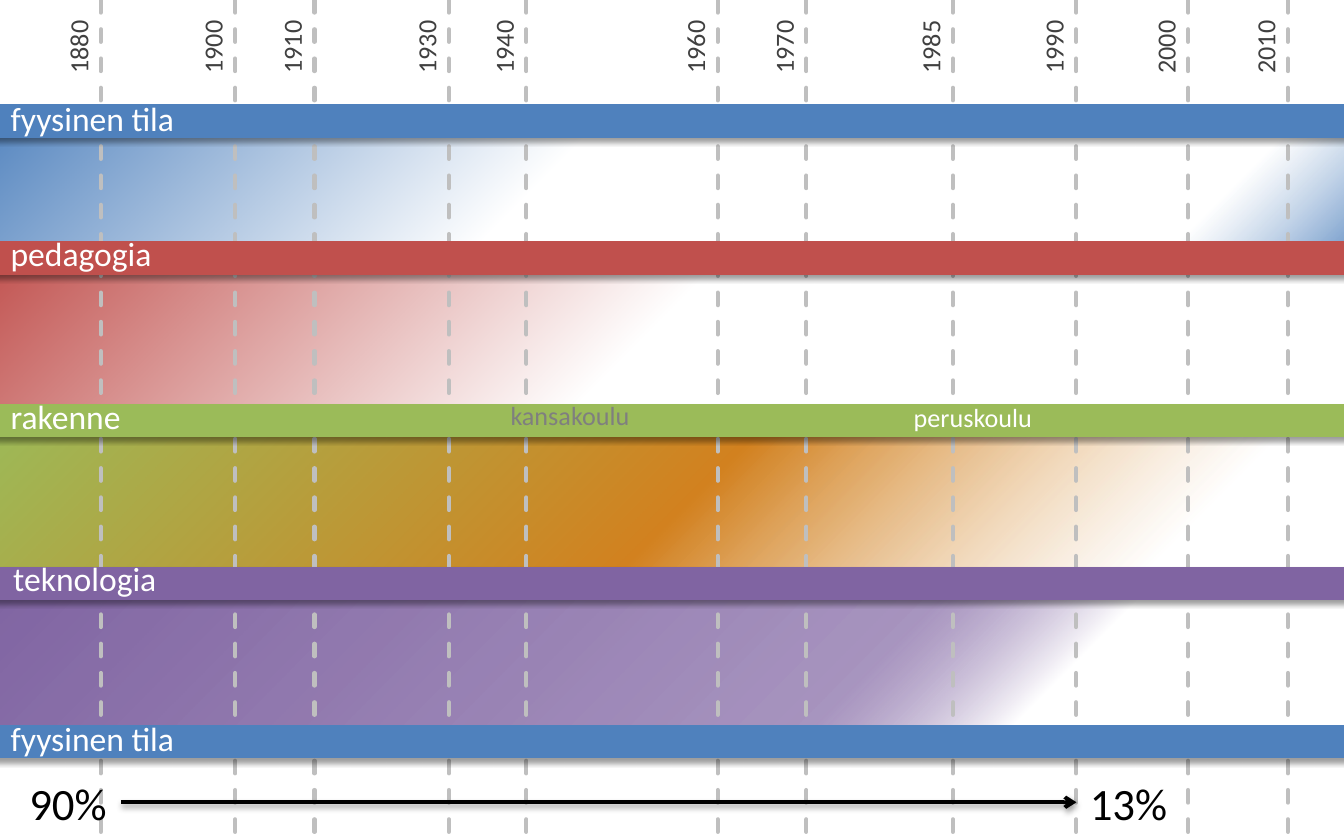
from dataclasses import dataclass

from lxml import etree
from pptx import Presentation
from pptx.dml.color import RGBColor
from pptx.enum.dml import MSO_LINE
from pptx.enum.shapes import MSO_CONNECTOR, MSO_SHAPE
from pptx.enum.text import MSO_AUTO_SIZE, PP_ALIGN
from pptx.oxml import parse_xml
from pptx.oxml.ns import qn
from pptx.util import Pt

STRAIGHT = MSO_CONNECTOR.STRAIGHT
RECTANGLE = MSO_SHAPE.RECTANGLE
DASH = MSO_LINE.DASH
FIT_SHAPE = MSO_AUTO_SIZE.SHAPE_TO_FIT_TEXT
LEFT, CENTER = PP_ALIGN.LEFT, PP_ALIGN.CENTER
DRAWING = "http://schemas.openxmlformats.org/drawingml/2006/main"


@dataclass(frozen=True)
class Theme:
    font: str = "Calibri"
    blue: str = "4F81BD"
    red: str = "C0504D"
    green: str = "9BBB59"
    orange: str = "D2811F"
    purple: str = "8064A2"
    white: str = "FFFFFF"
    black: str = "000000"
    grid: str = "BFBFBF"
    year: str = "404040"
    muted: str = "7F7F7F"
    small: int = 14
    medium: int = 18
    large: int = 24
    band_weight: float = 17.75
    grid_weight: float = 2.25
    arrow_weight: float = 2


THEME = Theme()
WIDTH, HEIGHT = 720, 450
BLEED = 18  # bands and fades run past both slide edges
FADE_HEIGHT = 73.4

# Year and the x of its grid line
YEARS = [
    ("1880", 54), ("1900", 126), ("1910", 168.5), ("1930", 240.5),
    ("1940", 282), ("1960", 384.5), ("1970", 432), ("1985", 510.5),
    ("1990", 576.5), ("2000", 636.5), ("2010", 690),
]

# Name, colour, centre y, label box (left, top, width)
BANDS = [
    ("fyysinen tila", THEME.blue, 64.8, (-1.4, 49, 103)),
    ("pedagogia", THEME.red, 138.2, (-1.4, 121, 90.7)),
    ("rakenne", THEME.green, 225.4, (-1.4, 208.8, 74.2)),
    ("teknologia", THEME.purple, 312.5, (0, 295.2, 92.2)),
    ("fyysinen tila", THEME.blue, 397.4, (-1.4, 380.9, 103)),
]

# Top of each fade and its stops: position %, colour, opacity %
FADES = [
    (64.8, [(0, THEME.blue, 100), (14, THEME.white, 68),
            (59, THEME.white, 100), (100, THEME.blue, 100)]),
    (144.7, [(0, THEME.white, 100), (15, THEME.white, 68),
             (52, THEME.white, 100), (100, THEME.red, 100)]),
    (231.8, [(0, THEME.white, 100), (15, THEME.white, 68),
             (49, THEME.orange, 100), (100, THEME.green, 100)]),
    (318.2, [(24, THEME.white, 100), (37, THEME.purple, 68),
             (100, THEME.purple, 100)]),
]


def add_text(slide, text, box, *, size, color, align=LEFT, rotation=0, space_after=0):
    shape = slide.shapes.add_textbox(*(Pt(length) for length in box))
    shape.rotation = rotation
    frame = shape.text_frame
    frame.word_wrap = False
    frame.auto_size = FIT_SHAPE
    paragraph = frame.paragraphs[0]
    paragraph.alignment = align
    paragraph.space_after = Pt(space_after)
    run = paragraph.add_run()
    run.text = text
    run.font.name = THEME.font
    run.font.size = Pt(size)
    run.font.color.rgb = RGBColor.from_string(color)


def add_line(slide, start, end, *, color, weight, dashed=False, arrow=False, shadow=False):
    line = slide.shapes.add_connector(STRAIGHT, *(Pt(n) for n in (*start, *end)))
    line.line.color.rgb = RGBColor.from_string(color)
    line.line.width = Pt(weight)
    outline = line.line._get_or_add_ln()
    if dashed:
        line.line.dash_style = DASH
        outline.set("cap", "rnd")
    if arrow:
        etree.SubElement(outline, qn("a:tailEnd"), type="arrow")
    effects = etree.SubElement(line._element.spPr, qn("a:effectLst"))
    if shadow:
        outer = etree.SubElement(
            effects, qn("a:outerShdw"), blurRad=str(Pt(3.1)), dist=str(Pt(1.6)),
            dir="5400000", rotWithShape="0")
        tint = etree.SubElement(outer, qn("a:srgbClr"), val=THEME.black)
        etree.SubElement(tint, qn("a:alpha"), val="38000")


def add_fade(slide, box, stops):
    """Rectangle with a gradient that starts in its lower right corner."""
    shape = slide.shapes.add_shape(RECTANGLE, *(Pt(length) for length in box))
    shape.shadow.inherit = False
    shape.line.fill.background()
    shape.fill.background()
    stop_xml = "".join(
        f'<a:gs pos="{position * 1000}"><a:srgbClr val="{color}">'
        f'<a:alpha val="{opacity * 1000}"/></a:srgbClr></a:gs>'
        for position, color, opacity in stops)
    gradient = parse_xml(
        f'<a:gradFill xmlns:a="{DRAWING}" rotWithShape="1"><a:gsLst>{stop_xml}</a:gsLst>'
        '<a:path path="circle"><a:fillToRect l="100000" t="100000"/></a:path></a:gradFill>')
    properties = shape._element.spPr
    properties.replace(properties.find(qn("a:noFill")), gradient)


def add_year_grid(slide, box):
    left, top, _, height = box
    label_width, label_height = 43.2, 24.5
    for year, offset in YEARS:
        x = left + offset
        add_line(slide, (x, top), (x, top + height), color=THEME.grid,
                 weight=THEME.grid_weight, dashed=True)
        label = (x - 12 - label_width / 2, top + 13, label_width, label_height)
        add_text(slide, year, label, size=THEME.small, color=THEME.year,
                 align=CENTER, rotation=270, space_after=6)


def add_bands(slide, box):
    left, top, width, _ = box
    for name, color, y, (label_left, label_top, label_width) in BANDS:
        add_line(slide, (left - BLEED, top + y), (left + width + BLEED, top + y),
                 color=color, weight=THEME.band_weight, shadow=True)
        add_text(slide, name, (left + label_left, top + label_top, label_width, 29),
                 size=THEME.medium, color=THEME.white)
    # School forms on the structure band
    for name, x, y, color in (("kansakoulu", 266.4, 210.2, THEME.muted),
                              ("peruskoulu", 482.4, 211.4, THEME.white)):
        add_text(slide, name, (left + x, top + y, 78.5, 24.5),
                 size=THEME.small, color=color)


def add_share_arrow(slide, box):
    left, top, width, height = box
    label_width = 56.2
    right = left + width - label_width
    for text, x in (("90%", left), ("13%", right)):
        add_text(slide, text, (x, top, label_width, height),
                 size=THEME.large, color=THEME.black)
    middle = top + height / 2
    add_line(slide, (left + label_width, middle), (right, middle), color=THEME.black,
             weight=THEME.arrow_weight, arrow=True, shadow=True)


def main():
    presentation = Presentation()
    presentation.slide_width, presentation.slide_height = Pt(WIDTH), Pt(HEIGHT)
    slide = presentation.slides.add_slide(presentation.slide_layouts[6])

    # Fades lie behind the grid, bands on top of it
    for top, stops in FADES:
        add_fade(slide, (-BLEED, top, WIDTH + 2 * BLEED, FADE_HEIGHT), stops)
    add_year_grid(slide, (0, 0, WIDTH, HEIGHT + 8))
    add_bands(slide, (0, 0, WIDTH, HEIGHT))
    add_share_arrow(slide, (8.6, 411.8, 624.3, 36))

    presentation.save("out.pptx")


if __name__ == "__main__":
    main()
